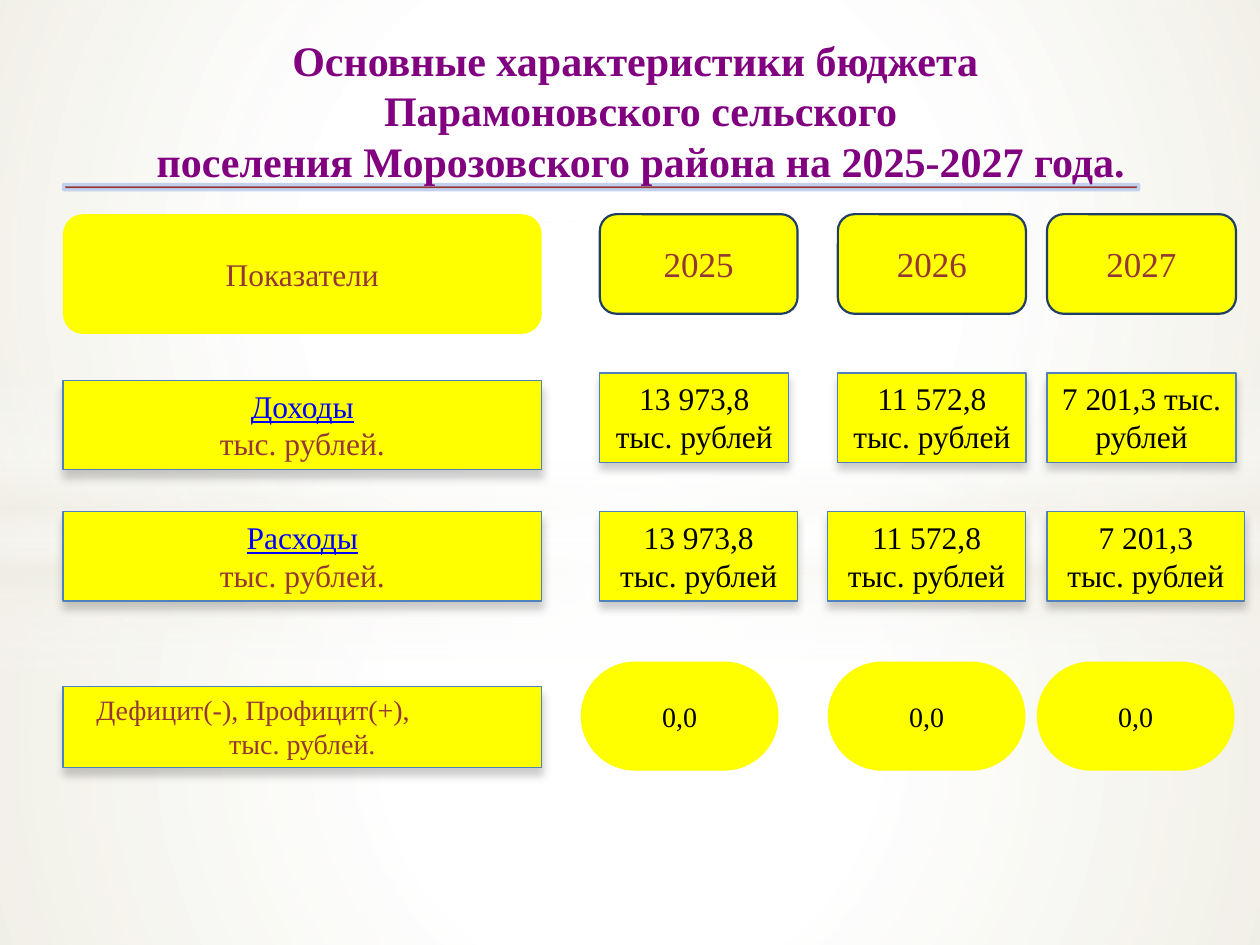
from dataclasses import dataclass
from typing import NamedTuple, Optional

from lxml import etree
from pptx import Presentation, util as u
from pptx.dml.color import RGBColor
from pptx.enum import shapes, text
from pptx.oxml.ns import qn
from pptx.shapes.autoshape import Shape

YELLOW, BROWN, BLACK = "FFFF00", "953735", "000000"
PURPLE, LINK = "800080", "0000FF"
WHITE, CREAM = "FFFFFF", "EEECE1"
RECT = shapes.MSO_SHAPE.RECTANGLE
ROUND = shapes.MSO_SHAPE.ROUNDED_RECTANGLE
OVAL = shapes.MSO_SHAPE.OVAL
CENTER, LEFT = text.PP_ALIGN.CENTER, text.PP_ALIGN.LEFT
UNIT = "тыс. рублей"


class Area(NamedTuple):
    left: float
    top: float
    width: float
    height: float


class Stop(NamedTuple):
    position: int
    color: str
    opacity: int = 100


@dataclass
class Line:
    words: str
    color: str = BLACK
    bold: bool = False
    underline: bool = False
    align: text.PP_ALIGN = CENTER
    indent: float = 0


@dataclass
class Style:
    kind: shapes.MSO_SHAPE
    size: float
    outline: Optional[str] = None
    weight: float = 0.75
    corner: Optional[float] = None
    raised: bool = False


LABEL = Style(ROUND, 18)
YEAR = Style(ROUND, 20, outline="203F63", weight=1.25)
AMOUNT = Style(RECT, 18, outline="4F81BD", raised=True)
BALANCE_LABEL = Style(RECT, 16, outline="4F81BD", raised=True)
BALANCE = Style(ROUND, 16, corner=0.5)


def rgb(color: str) -> RGBColor:
    return RGBColor.from_string(color)


def assign(target, values: dict) -> None:
    for name, value in values.items():
        setattr(target, name, value)


def add_color(parent, color: str, opacity: int) -> None:
    node = etree.SubElement(parent, qn("a:srgbClr"), val=color)
    etree.SubElement(node, qn("a:alpha"), val=str(opacity * 1000))


def add_outline(shape: Shape, color: Optional[str], weight: float) -> None:
    if color:
        shape.line.color.rgb = rgb(color)
        shape.line.width = u.Pt(weight)
    else:
        shape.line.fill.background()


def add_plain(slide, kind, area: Area) -> Shape:
    shape = slide.shapes.add_shape(kind, *map(u.Pt, area))
    shape.shadow.inherit = False
    return shape


def add_gradient(slide, kind, area: Area, stops: list[Stop], route: Optional[str],
                 outline: Optional[str] = None) -> None:
    shape = add_plain(slide, kind, area)
    add_outline(shape, outline, 1.25)
    shape.fill.background()
    properties = shape._element.spPr
    gradient = etree.Element(qn("a:gradFill"), rotWithShape="1")
    stop_list = etree.SubElement(gradient, qn("a:gsLst"))
    for stop in stops:
        node = etree.SubElement(stop_list, qn("a:gs"), pos=str(stop.position * 1000))
        add_color(node, stop.color, stop.opacity)
    if route:
        center = etree.SubElement(gradient, qn("a:path"), {"path": route})
        etree.SubElement(center, qn("a:fillToRect"), dict.fromkeys("ltrb", "50000"))
    else:
        etree.SubElement(gradient, qn("a:lin"), ang="5400000", scaled="0")
    properties.replace(properties.find(qn("a:noFill")), gradient)


def write(shape: Shape, lines: list[Line], size: float, frame_format: dict) -> None:
    frame = shape.text_frame
    assign(frame, {"word_wrap": True, **frame_format})
    for number, line in enumerate(lines):
        paragraph = frame.add_paragraph() if number else frame.paragraphs[0]
        paragraph.alignment = line.align
        if line.indent:
            assign_indent = paragraph._p.get_or_add_pPr()
            assign_indent.set("marL", "0")
            assign_indent.set("indent", str(u.Pt(line.indent)))
        run = paragraph.add_run()
        run.text = line.words
        assign(run.font, {"name": "Times New Roman", "size": u.Pt(size),
                          "bold": line.bold, "underline": line.underline})
        run.font.color.rgb = rgb(line.color)


def add_card(slide, area: Area, style: Style, lines: list[Line]) -> None:
    card = add_plain(slide, style.kind, area)
    card.fill.solid()
    card.fill.fore_color.rgb = rgb(YELLOW)
    add_outline(card, style.outline, style.weight)
    if style.corner:
        card.adjustments[0] = style.corner
    frame_format = {"vertical_anchor": text.MSO_ANCHOR.MIDDLE}
    if style.raised:
        effects = card._element.spPr.find(qn("a:effectLst"))
        shadow = etree.SubElement(effects, qn("a:outerShdw"), blurRad=str(u.Pt(5)),
                                  dist=str(u.Pt(4)), dir="5400000", rotWithShape="0")
        add_color(shadow, BLACK, 20)
        frame_format = {"vertical_anchor": text.MSO_ANCHOR.TOP,
                        "auto_size": text.MSO_AUTO_SIZE.SHAPE_TO_FIT_TEXT}
    write(card, lines, style.size, frame_format)


def add_backdrop(slide) -> None:
    add_gradient(slide, RECT, Area(0, 304.5, 720, 235.5),
                 [Stop(0, WHITE, 91), Stop(37, WHITE, 76), Stop(100, CREAM, 79)], "circle")
    add_gradient(slide, RECT, Area(0, 0, 720, 304.5),
                 [Stop(0, WHITE, 89), Stop(48, WHITE, 62), Stop(100, CREAM, 79)], "circle")
    add_gradient(slide, RECT, Area(0, 208.8, 720, 180),
                 [Stop(0, WHITE, 0), Stop(29, WHITE, 30), Stop(45, CREAM, 40),
                  Stop(55, WHITE, 26), Stop(65, CREAM, 60), Stop(100, WHITE, 0)], None)
    add_gradient(slide, OVAL, Area(0, 126, 720, 401.8),
                 [Stop(0, WHITE), Stop(54, WHITE, 0)], "circle")


def add_title(slide) -> None:
    add_gradient(slide, ROUND, Area(36, 105.1, 615, 3.6),
                 [Stop(0, BROWN), Stop(50, "C2D1ED"), Stop(100, "E1E8F5")],
                 "rect", "C2D1ED")
    title = slide.shapes.add_textbox(*map(u.Pt, Area(36.7, 15.8, 623.5, 94.3)))
    rows = ["Основные характеристики бюджета ", "Парамоновского сельского",
            "поселения Морозовского района на 2025-2027 года."]
    write(title, [Line(row, PURPLE, bold=True, indent=35.3) for row in rows], 24,
          {"vertical_anchor": text.MSO_ANCHOR.MIDDLE,
           "auto_size": text.MSO_AUTO_SIZE.SHAPE_TO_FIT_TEXT})


def add_labels(slide) -> None:
    add_card(slide, Area(36, 122.4, 273.6, 68.4), LABEL, [Line("Показатели", BROWN)])
    for top, name in ((217.4, "Доходы"), (292.3, "Расходы")):
        add_card(slide, Area(36, top, 273.6, 51.1), AMOUNT,
                 [Line(name, LINK, underline=True), Line(UNIT + ".", BROWN)])
    add_card(slide, Area(36, 392.4, 273.6, 46.1), BALANCE_LABEL,
             [Line("Дефицит(-), Профицит(+),", BROWN, align=LEFT, indent=12),
              Line(UNIT + ".", BROWN)])


def add_figures(slide) -> None:
    narrow = [(342.8, 108), (478.8, 107.5), (598.3, 108)]
    years = [(342.8, 113), *narrow[1:]]
    wide = [(left, 113) for left in (342.8, 473, 598.3)]
    ovals = [(left, 113) for left in (331.9, 473, 592.5)]
    amounts = [[Line(value), Line(UNIT)] for value in ("13 973,8", "11 572,8", "7 201,3")]
    income = [*amounts[:2], [Line("7 201,3 " + UNIT)]]
    rows = [
        (122.4, 56.9, YEAR, years, [[Line(str(year), BROWN)] for year in range(2025, 2028)]),
        (213.1, 51.1, AMOUNT, narrow, income),
        (292.3, 51.1, AMOUNT, wide, amounts),
        (378, 62.4, BALANCE, ovals, [[Line("0,0")]] * 3),
    ]
    for top, height, style, columns, cells in rows:
        for (left, width), lines in zip(columns, cells):
            add_card(slide, Area(left, top, width, height), style, lines)


def main() -> None:
    deck = Presentation()
    assign(deck, {"slide_width": u.Pt(720), "slide_height": u.Pt(540)})
    slide = deck.slides.add_slide(deck.slide_layouts[6])
    for draw in (add_backdrop, add_title, add_labels, add_figures):
        draw(slide)
    deck.save("out.pptx")


if __name__ == "__main__":
    main()
